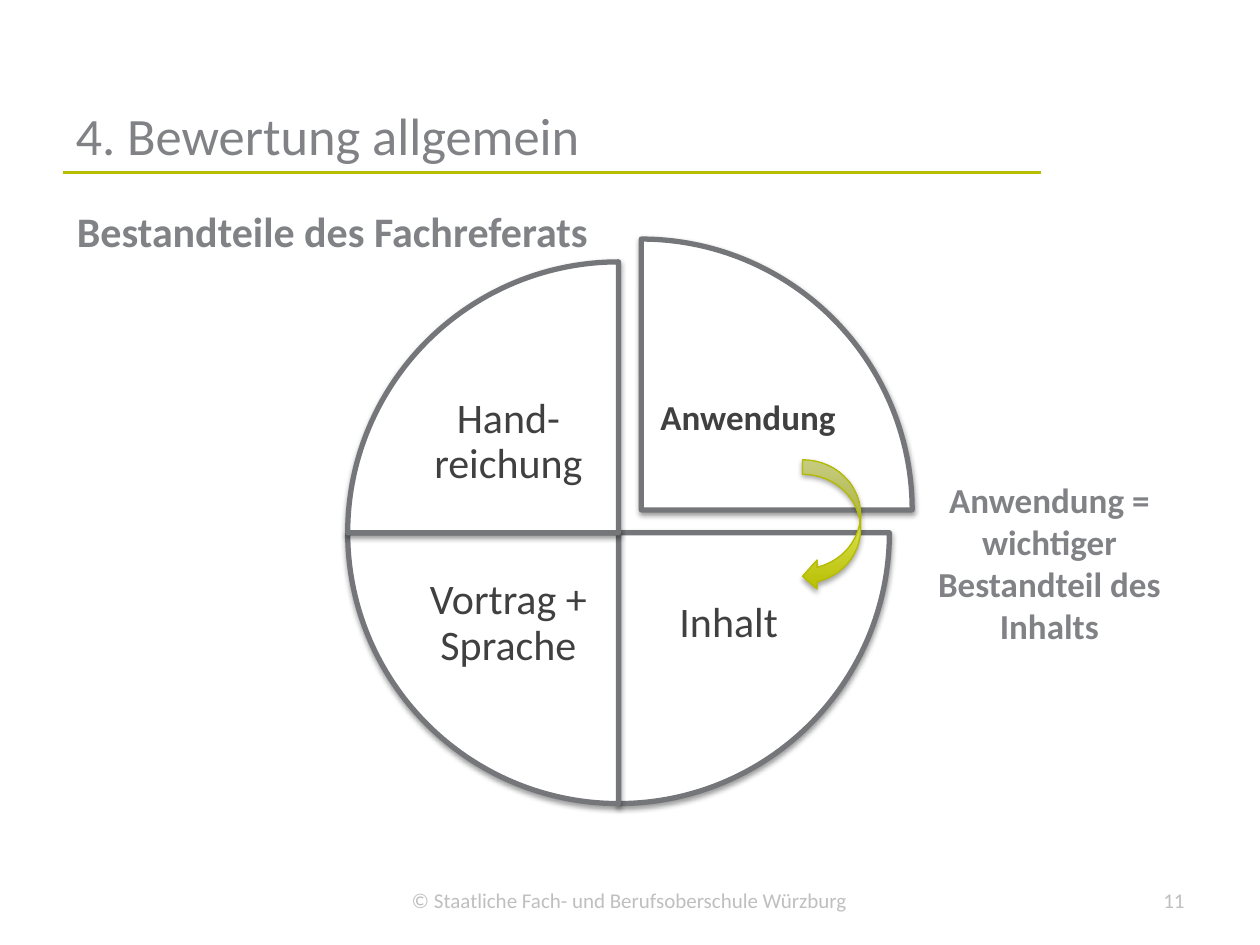
"""Build the slide on the parts of the subject presentation and their assessment."""
from dataclasses import dataclass

import lxml.etree
import pptx
import pptx.dml.color
import pptx.enum.shapes
import pptx.enum.text
import pptx.oxml.ns
import pptx.util

Cm = pptx.util.Cm
Pt = pptx.util.Pt
ALIGN = pptx.enum.text.PP_ALIGN
ANCHOR = pptx.enum.text.MSO_ANCHOR
SHAPE = pptx.enum.shapes.MSO_SHAPE
COLORS = {
    "green": "B7BE01", "arrow_dark": "B8BF00", "arrow_light": "F8FF9F",
    "arrow_line": "B4BB00", "heading": "818286", "outline": "75767A",
    "label": "404040", "footer": "BFBFBF", "white": "FFFFFF", "shadow": "000000",
}
PIE_LEFT, PIE_TOP, PIE_SIZE, PULL_OUT = 7.01, 5.28, 10.92, 0.46


@dataclass
class Area:
    left: float
    top: float
    width: float
    height: float

    def lengths(self) -> list:
        return [Cm(self.left), Cm(self.top), Cm(self.width), Cm(self.height)]


@dataclass
class TextStyle:
    size: float
    color: str
    bold: bool = False
    align: ALIGN = ALIGN.LEFT
    anchor: ANCHOR = ANCHOR.TOP
    inset: float | None = None
    spacing: float | None = None


@dataclass
class Quarter:
    label: str
    start: int
    label_left: float
    label_top: float
    size: int = 24
    bold: bool = False
    pull: float = 0


QUARTERS = [
    Quarter("Anwendung", 270, 13.06, 6.83, 20, True, PULL_OUT),
    Quarter("Inhalt", 0, 12.67, 10.95),
    Quarter("Vortrag + Sprache", 90, 8.23, 10.95),
    Quarter("Hand-reichung", 180, 8.23, 7.29),
]


def rgb(name: str) -> pptx.dml.color.RGBColor:
    return pptx.dml.color.RGBColor.from_string(COLORS[name])


def write(box, text: str, style: TextStyle) -> None:
    frame = box.text_frame
    frame.word_wrap = True
    frame.auto_size = pptx.enum.text.MSO_AUTO_SIZE.NONE
    frame.vertical_anchor = style.anchor
    if style.inset is not None:
        frame.margin_left = frame.margin_right = Cm(style.inset)
        frame.margin_top = frame.margin_bottom = Cm(style.inset)
    frame.text = text
    para = frame.paragraphs[0]
    para.alignment = style.align
    para.line_spacing = style.spacing
    for span in para.runs:
        span.font.name = "Calibri"
        span.font.size = Pt(style.size)
        span.font.bold = style.bold
        span.font.color.rgb = rgb(style.color)


def add_text(page, area: Area, text: str, style: TextStyle) -> None:
    write(page.shapes.add_textbox(*area.lengths()), text, style)


def add_shadow(shape, opacity: int, distance: float) -> None:
    shape.shadow.inherit = False
    qn = pptx.oxml.ns.qn
    effects = shape._element.spPr.find(qn("a:effectLst"))
    shadow = lxml.etree.SubElement(
        effects, qn("a:outerShdw"), blurRad=str(Pt(3.1)), dist=str(Pt(distance)),
        dir="5400000", rotWithShape="0")
    color = lxml.etree.SubElement(shadow, qn("a:srgbClr"), val=COLORS["shadow"])
    lxml.etree.SubElement(color, qn("a:alpha"), val=str(opacity * 1000))


def add_quarter(page, quarter: Quarter) -> None:
    area = Area(PIE_LEFT + quarter.pull, PIE_TOP - quarter.pull, PIE_SIZE, PIE_SIZE)
    pie = page.shapes.add_shape(SHAPE.PIE, *area.lengths())
    pie.adjustments[0] = quarter.start * 0.6
    pie.adjustments[1] = (quarter.start + 90) % 360 * 0.6
    pie.fill.solid()
    pie.fill.fore_color.rgb = rgb("white")
    pie.line.color.rgb = rgb("outline")
    pie.line.width = Pt(3)
    add_shadow(pie, 38, 1.6)
    style = TextStyle(quarter.size, "label", quarter.bold, ALIGN.CENTER,
                      ANCHOR.MIDDLE, 0.08, 0.9)
    add_text(page, Area(quarter.label_left, quarter.label_top, 4.04, 3.25),
             quarter.label, style)


def add_arrow(page, area: Area) -> None:
    arrow = page.shapes.add_shape(SHAPE.CURVED_LEFT_ARROW, *area.lengths())
    arrow.fill.gradient()
    arrow.fill.gradient_angle = 90
    for stop, name, position in zip(arrow.fill.gradient_stops,
                                    ("arrow_dark", "arrow_light"), (0, 1)):
        stop.color.rgb = rgb(name)
        stop.position = position
    arrow.line.color.rgb = rgb("arrow_line")
    arrow.line.width = Pt(0.75)
    add_shadow(arrow, 35, 1.8)


def add_rule(page, left: float, right: float, top: float) -> None:
    rule = page.shapes.add_connector(pptx.enum.shapes.MSO_CONNECTOR.STRAIGHT,
                                     Cm(left), Cm(top), Cm(right), Cm(top))
    rule.line.color.rgb = rgb("green")
    rule.line.width = Pt(2)
    lxml.etree.SubElement(rule._element.spPr, pptx.oxml.ns.qn("a:effectLst"))


def main() -> None:
    deck = pptx.Presentation()
    deck.slide_width, deck.slide_height = Cm(25.4), Cm(19.05)
    page = deck.slides.add_slide(deck.slide_layouts[5])

    title = page.shapes.title
    title.left, title.top, title.width, title.height = Area(1.27, 1.47, 19.71, 2.01).lengths()
    write(title, "4. Bewertung allgemein", TextStyle(30, "heading", anchor=ANCHOR.BOTTOM))
    add_rule(page, 1.27, 20.98, 3.48)

    add_text(page, Area(7.19, 17.65, 11, 1),
             "© Staatliche Fach- und Berufsoberschule Würzburg",
             TextStyle(12, "footer", align=ALIGN.CENTER, anchor=ANCHOR.MIDDLE))
    add_text(page, Area(18.21, 17.65, 5.92, 1), "11",
             TextStyle(12, "footer", align=ALIGN.RIGHT, anchor=ANCHOR.MIDDLE))

    for quarter in QUARTERS:
        add_quarter(page, quarter)
    add_arrow(page, Area(16.18, 9.27, 1.17, 2.64))

    add_text(page, Area(17.83, 9.53, 6.65, 2.82),
             "Anwendung = wichtiger Bestandteil des Inhalts",
             TextStyle(20, "heading", True, ALIGN.CENTER))
    add_text(page, Area(1.3, 4.01, 11.4, 1.27), "Bestandteile des Fachreferats",
             TextStyle(24, "heading", True))
    deck.save("out.pptx")


if __name__ == "__main__":
    main()
